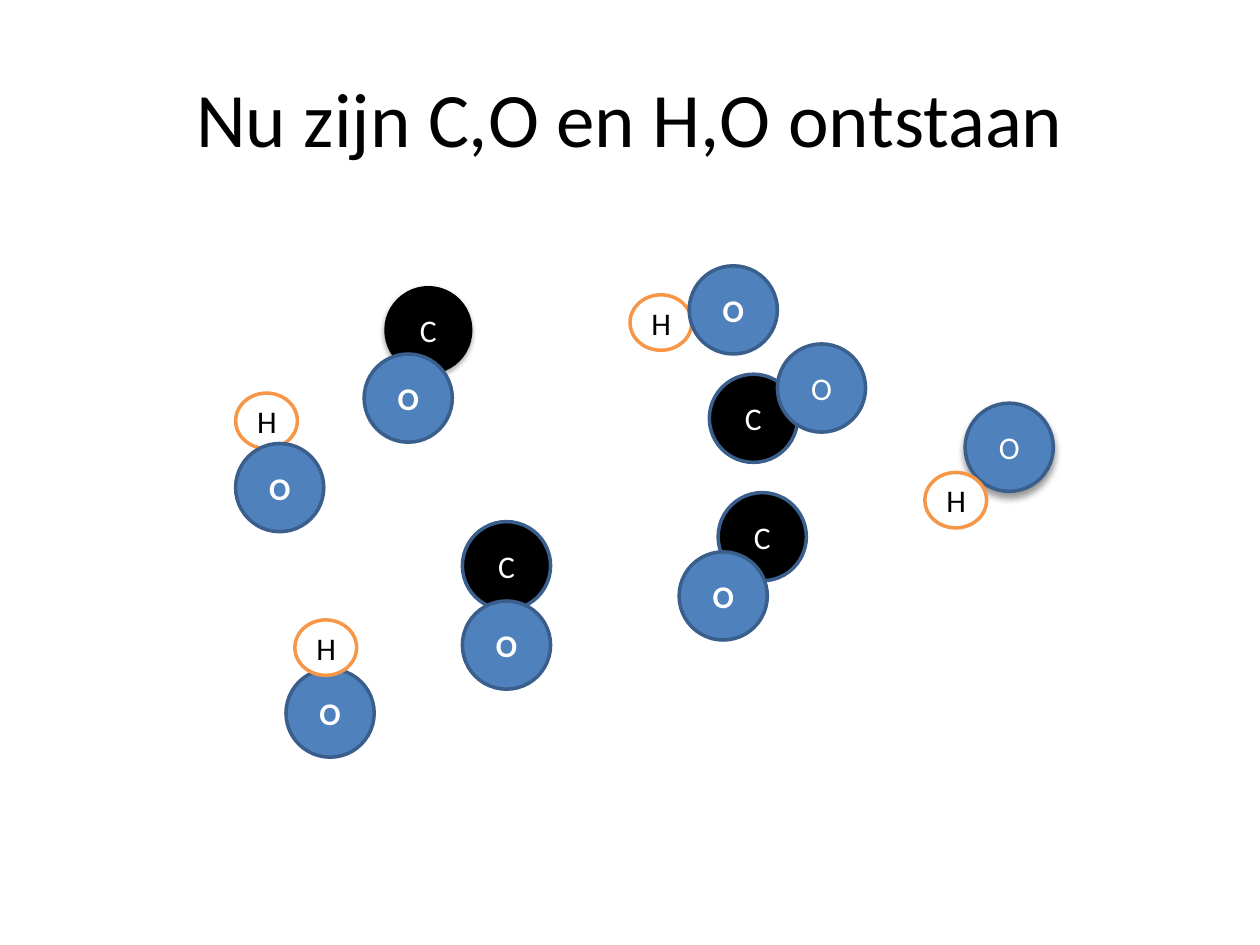
"""Build a slide of C,O and H,O molecules drawn as overlapping atoms."""
from dataclasses import dataclass
from typing import Any, NamedTuple, Optional

import pptx
import pptx.dml.color
import pptx.enum.shapes
import pptx.enum.text
import pptx.oxml
import pptx.oxml.ns
import pptx.util
from pptx.util import Inches


@dataclass(frozen=True)
class Theme:
    font: str = "Calibri"
    title_size: int = 44
    atom_size: int = 18
    line_width: int = 2
    black: str = "000000"
    white: str = "FFFFFF"
    blue: str = "4F81BD"
    dark_blue: str = "3A5F8C"
    orange: str = "F79646"


class Element(NamedTuple):
    width: float
    height: float
    fill: str
    line: str
    color: str


class Shadow(NamedTuple):
    alpha: int
    blur: float
    dist: float


class Atom(NamedTuple):
    symbol: str
    left: float
    top: float
    bold: bool = False
    outlined: bool = True
    shadow: Optional[Shadow] = None


THEME = Theme()
ELEMENTS = {
    "C": Element(0.7, 0.7, THEME.black, THEME.dark_blue, THEME.white),
    "O": Element(0.7, 0.7, THEME.blue, THEME.dark_blue, THEME.white),
    "H": Element(0.49, 0.44, THEME.white, THEME.orange, THEME.black),
}
ATOMS = [
    Atom("C", 5.63, 2.97),
    Atom("O", 6.17, 2.73),
    Atom("O", 2.27, 5.31, bold=True),
    Atom("O", 7.66, 3.2, shadow=Shadow(40, 4, 3)),
    Atom("C", 5.7, 3.91),
    Atom("C", 3.05, 2.27, outlined=False, shadow=Shadow(35, 3.1, 1.8)),
    Atom("C", 3.67, 4.14),
    Atom("H", 2.34, 4.92),
    Atom("H", 7.34, 3.75),
    Atom("H", 1.87, 3.12),
    Atom("H", 5, 2.34),
    Atom("O", 5.47, 2.11, bold=True),
    Atom("O", 1.87, 3.52, bold=True),
    Atom("O", 5.39, 4.38, bold=True),
    Atom("O", 2.89, 2.81, bold=True),
    Atom("O", 3.67, 4.77, bold=True),
]


def rgb(value: str) -> pptx.dml.color.RGBColor:
    """Turn a hex string into a colour."""
    return pptx.dml.color.RGBColor.from_string(value)


def write(tf: Any, text: str, size: int, color: str, bold: bool = False) -> None:
    """Write one centred run into a text frame."""
    tf.word_wrap = True
    tf.vertical_anchor = pptx.enum.text.MSO_ANCHOR.MIDDLE
    p = tf.paragraphs[0]
    p.alignment = pptx.enum.text.PP_ALIGN.CENTER
    r = p.add_run()
    r.text = text
    formats = {"name": THEME.font, "size": pptx.util.Pt(size), "bold": bold}
    for name, value in formats.items():
        setattr(r.font, name, value)
    r.font.color.rgb = rgb(color)


def add_shadow(sp: Any, shadow: Shadow) -> None:
    """Put a downward outer shadow on a shape."""
    blur, dist = (int(pptx.util.Pt(v)) for v in (shadow.blur, shadow.dist))
    effects = sp._element.spPr.find(pptx.oxml.ns.qn("a:effectLst"))
    effects.append(pptx.oxml.parse_xml(
        f'<a:outerShdw {pptx.oxml.ns.nsdecls("a")} blurRad="{blur}" '
        f'dist="{dist}" dir="5400000" rotWithShape="0">'
        f'<a:srgbClr val="{THEME.black}"><a:alpha val="{shadow.alpha * 1000}"/>'
        '</a:srgbClr></a:outerShdw>'
    ))


def add_atom(s: Any, atom: Atom) -> None:
    """Draw one atom with its symbol."""
    element = ELEMENTS[atom.symbol]
    box = (atom.left, atom.top, element.width, element.height)
    sp = s.shapes.add_shape(pptx.enum.shapes.MSO_SHAPE.OVAL, *map(Inches, box))
    sp.shadow.inherit = False
    sp.fill.solid()
    sp.fill.fore_color.rgb = rgb(element.fill)
    if atom.outlined:
        sp.line.color.rgb = rgb(element.line)
        sp.line.width = pptx.util.Pt(THEME.line_width)
    else:
        sp.line.fill.background()
    if atom.shadow:
        add_shadow(sp, atom.shadow)
    write(sp.text_frame, atom.symbol, THEME.atom_size, element.color, atom.bold)


def add_title(s: Any, text: str) -> None:
    """Place and fill the title placeholder."""
    title = s.shapes.title
    box = {"left": 0.5, "top": 0.3, "width": 9, "height": 1.25}
    for name, value in box.items():
        setattr(title, name, Inches(value))
    write(title.text_frame, text, THEME.title_size, THEME.black)


def main() -> None:
    """Build and save the presentation."""
    prs = pptx.Presentation()
    prs.slide_width, prs.slide_height = Inches(10), Inches(7.5)
    s = prs.slides.add_slide(prs.slide_layouts.get_by_name("Title Only"))
    s.background.fill.solid()
    s.background.fill.fore_color.rgb = rgb(THEME.white)
    add_title(s, "Nu zijn C,O en H,O ontstaan")
    for atom in ATOMS:
        add_atom(s, atom)
    prs.save("out.pptx")


if __name__ == "__main__":
    main()
